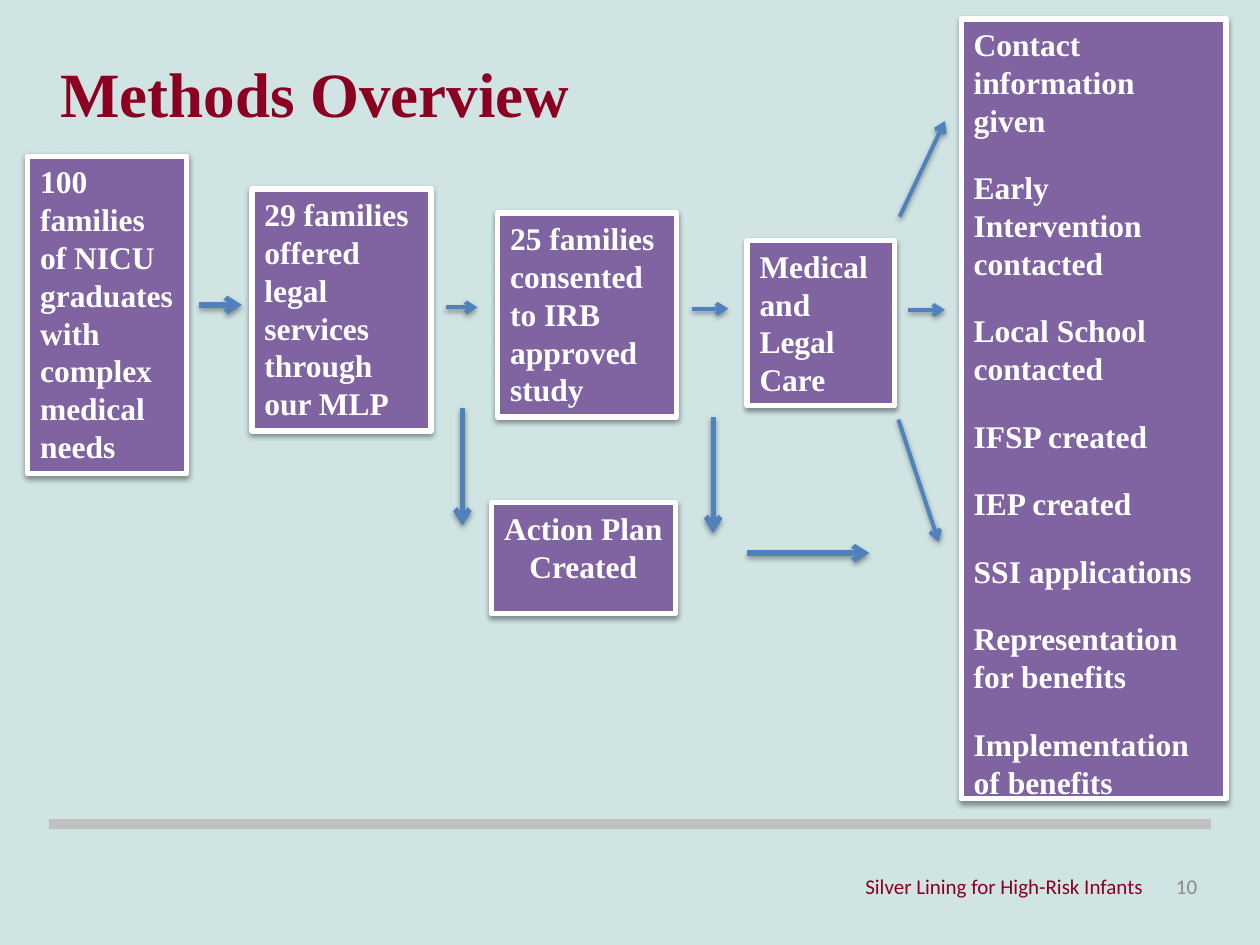
from typing import NamedTuple

from lxml import etree
from pptx import Presentation
from pptx.dml.color import RGBColor
from pptx.enum.shapes import MSO_CONNECTOR, MSO_SHAPE
from pptx.enum.text import MSO_ANCHOR, PP_ALIGN
from pptx.oxml.ns import qn
from pptx.util import Inches, Pt

RECTANGLE = MSO_SHAPE.RECTANGLE
STRAIGHT = MSO_CONNECTOR.STRAIGHT
LEFT, CENTER, RIGHT = PP_ALIGN.LEFT, PP_ALIGN.CENTER, PP_ALIGN.RIGHT
TOP, MIDDLE = MSO_ANCHOR.TOP, MSO_ANCHOR.MIDDLE
SERIF, SANS = "Times New Roman", "Calibri"
BACKGROUND, MAROON, PURPLE = "CFE4E3", "8B0021", "8064A2"
BLUE, WHITE, SILVER, GRAY = "4F81BD", "FFFFFF", "C0C0C0", "898989"


class Step(NamedTuple):
    left: float
    top: float
    width: float
    height: float
    lines: tuple[str, ...]
    align: PP_ALIGN = LEFT


class Arrow(NamedTuple):
    start: tuple[float, float]
    end: tuple[float, float]
    weight: float = 2.25


STEPS = [
    Step(0.22, 1.24, 1.26, 2.52,
         ("100 families of NICU graduates with complex medical needs",)),
    Step(2, 1.5, 1.42, 1.92,
         ("29 families offered legal services through our MLP",)),
    Step(3.95, 1.69, 1.42, 1.62,
         ("25 families consented to IRB approved study",)),
    Step(3.9, 3.99, 1.46, 0.88, ("Action Plan Created",), CENTER),
    Step(5.93, 1.91, 1.17, 1.31, ("Medical and Legal Care",)),
    Step(7.63, 0.15, 2.1, 6.19, (
        "Contact information given",
        "Early Intervention contacted",
        "Local School contacted",
        "IFSP created",
        "IEP created",
        "SSI applications",
        "Representation for benefits",
        "Implementation of benefits",
    )),
]

ARROWS = [
    Arrow((1.58, 2.42), (1.92, 2.42), 3),
    Arrow((3.54, 2.44), (3.79, 2.44)),
    Arrow((5.49, 2.45), (5.78, 2.45)),
    Arrow((7.21, 2.46), (7.5, 2.46)),
    Arrow((7.14, 1.72), (7.5, 0.96)),
    Arrow((7.13, 3.33), (7.45, 4.3)),
    Arrow((3.67, 3.24), (3.67, 4.17), 3),
    Arrow((5.66, 3.31), (5.66, 4.23), 3),
    Arrow((5.93, 4.39), (6.9, 4.39), 3),
]


def color(value: str) -> RGBColor:
    return RGBColor.from_string(value)


def add_shadow(properties) -> None:
    effects = etree.SubElement(properties, qn("a:effectLst"))
    shadow = etree.SubElement(
        effects, qn("a:outerShdw"), blurRad=str(Pt(3.1)), dist=str(Pt(1.6)),
        dir="5400000", rotWithShape="0")
    black = etree.SubElement(shadow, qn("a:srgbClr"), val="000000")
    etree.SubElement(black, qn("a:alpha"), val="38000")


def write(shape, *lines: str, size: float, font: str, fill: str,
          bold: bool = False, align: PP_ALIGN = LEFT,
          anchor: MSO_ANCHOR = TOP, gap: float = 0) -> None:
    frame = shape.text_frame
    frame.word_wrap = True
    frame.vertical_anchor = anchor
    for index, line in enumerate(lines):
        para = frame.add_paragraph() if index else frame.paragraphs[0]
        para.alignment = align
        para.space_before = Pt(gap if index else 0)
        span = para.add_run()
        span.text = line
        span.font.size = Pt(size)
        span.font.name = font
        span.font.bold = bold
        span.font.color.rgb = color(fill)


def add_text(page, left: float, top: float, width: float, height: float,
             text: str, **style) -> None:
    box = page.shapes.add_textbox(
        Inches(left), Inches(top), Inches(width), Inches(height))
    write(box, text, **style)


def add_rectangle(page, left: float, top: float, width: float, height: float,
                  fill: str):
    shape = page.shapes.add_shape(
        RECTANGLE, Inches(left), Inches(top), Inches(width), Inches(height))
    shape.fill.solid()
    shape.fill.fore_color.rgb = color(fill)
    return shape


def add_step(page, step: Step) -> None:
    box = add_rectangle(page, step.left, step.top, step.width, step.height,
                        PURPLE)
    box.line.color.rgb = color(WHITE)
    box.line.width = Pt(3)
    add_shadow(box.element.spPr)
    write(box, *step.lines, size=18, font=SERIF, fill=WHITE, bold=True,
          align=step.align, gap=17)


def add_arrow(page, arrow: Arrow) -> None:
    connector = page.shapes.add_connector(
        STRAIGHT, *map(Inches, arrow.start + arrow.end))
    connector.line.color.rgb = color(BLUE)
    connector.line.width = Pt(arrow.weight)
    properties = connector.element.spPr
    etree.SubElement(properties.find(qn("a:ln")), qn("a:tailEnd"),
                     type="arrow")
    add_shadow(properties)


def main() -> None:
    deck = Presentation()
    deck.slide_width, deck.slide_height = Inches(10), Inches(7.5)
    page = deck.slides.add_slide(deck.slide_layouts[6])
    page.background.fill.solid()
    page.background.fill.fore_color.rgb = color(BACKGROUND)

    rule = add_rectangle(page, 0.39, 6.5, 9.22, 0.08, SILVER)
    rule.line.fill.background()
    rule.shadow.inherit = False

    add_text(page, 0.38, 0.38, 7.62, 0.61, "Methods Overview",
             size=36, font=SERIF, fill=MAROON, bold=True)
    add_text(page, 9.18, 6.83, 0.42, 0.4, "10",
             size=12, font=SANS, fill=GRAY, align=RIGHT, anchor=MIDDLE)
    add_text(page, 6, 6.83, 3.17, 0.4, "Silver Lining for High-Risk Infants",
             size=12, font=SANS, fill=MAROON, align=RIGHT, anchor=MIDDLE)

    for step in STEPS:
        add_step(page, step)
    for arrow in ARROWS:
        add_arrow(page, arrow)

    deck.save("out.pptx")


if __name__ == "__main__":
    main()
